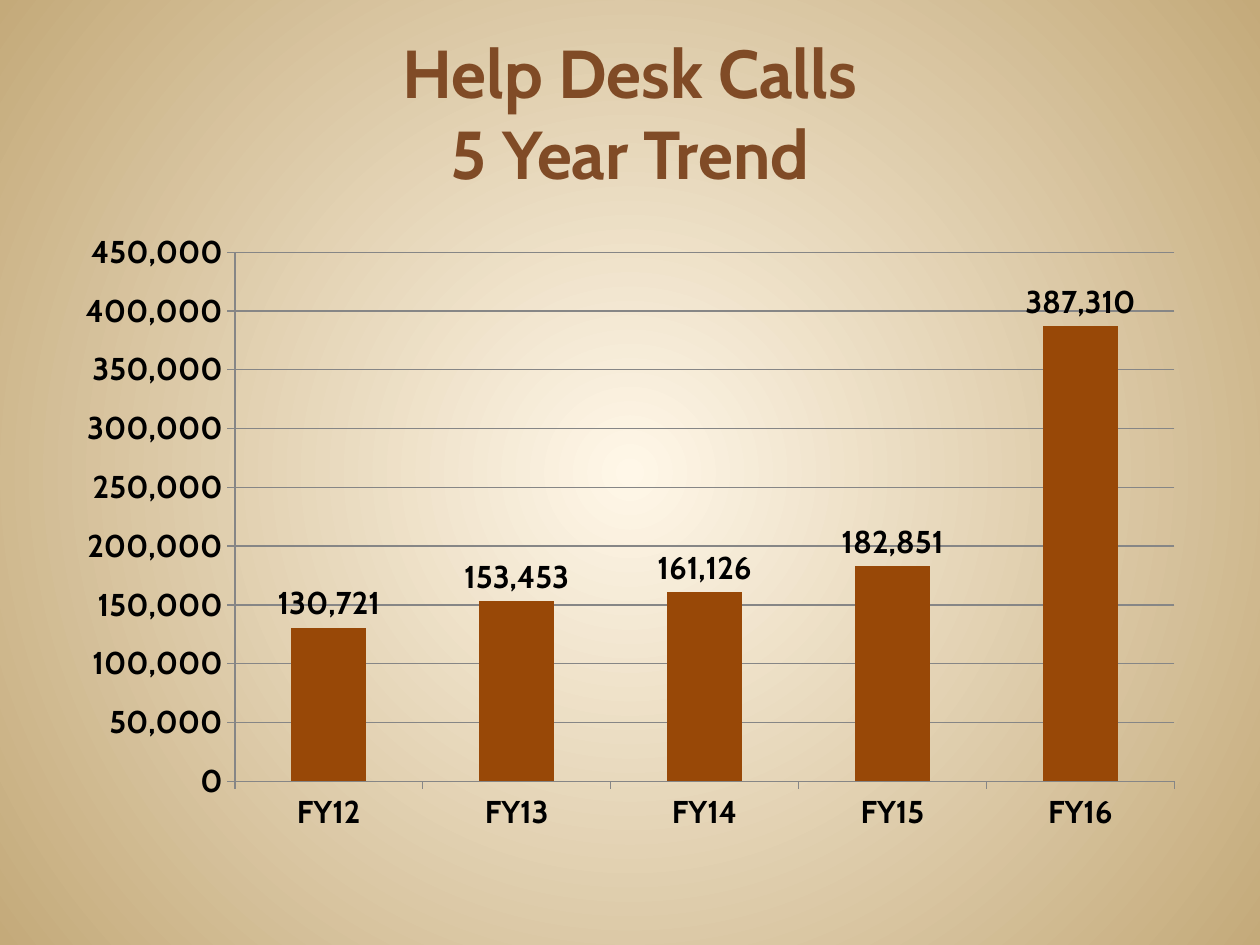
from lxml.etree import SubElement
from pptx import Presentation
from pptx.chart.data import CategoryChartData as ChartData
from pptx.dml.color import RGBColor
from pptx.enum.chart import XL_CHART_TYPE as ChartType, XL_LABEL_POSITION as LabelPosition, XL_TICK_MARK as TickMark
from pptx.enum.text import MSO_ANCHOR as Anchor, PP_ALIGN as Align
from pptx.oxml.ns import qn
from pptx.util import Cm, Pt

TITLE = "Help Desk Calls\v5 Year Trend"
CALLS = {"FY12": 130721, "FY13": 153453, "FY14": 161126, "FY15": 182851, "FY16": 387310}
SERIES = "Series 1"
NUMBER_FORMAT = "#,##0"

THEME = {
    "font": "Cabin",
    "title_size": 38.7,
    "chart_size": 18,
    "title": "804B26",
    "text": "000000",
    "bar": "984807",
    "line": "868686",
    "center": "FFF7E8",
    "edge": "C4AA7A",
}

WIDTH, HEIGHT = 25.4, 19.05
MARGIN = 1.27
CONTENT_WIDTH = WIDTH - 2 * MARGIN
TITLE_TOP, TITLE_HEIGHT = 0.84, 3.18
CHART_TOP, CHART_HEIGHT = 4.45, 12.57


def color(name):
    return RGBColor.from_string(THEME[name])


def format_font(font, size, fill, bold=True):
    font.name = THEME["font"]
    font.size = Pt(THEME[size])
    font.bold = bold
    font.color.rgb = color(fill)


def add_text(slide, text, *, left, top, width, height, size, fill, align, anchor):
    shape = slide.shapes.add_textbox(Cm(left), Cm(top), Cm(width), Cm(height))
    frame = shape.text_frame
    frame.word_wrap = True
    frame.vertical_anchor = anchor
    paragraph = frame.paragraphs[0]
    paragraph.text = text
    paragraph.alignment = align
    format_font(paragraph.font, size, fill)
    for run in paragraph.runs:
        format_font(run.font, size, fill)


def paint_background(slide):
    fill = slide.background.fill
    fill.gradient()
    for stop, position, name in zip(fill.gradient_stops, (0, 1), ("center", "edge")):
        stop.position = position
        stop.color.rgb = color(name)
    gradient = slide.background._cSld.find(".//" + qn("a:gradFill"))
    gradient.remove(gradient.find(qn("a:lin")))
    circle = SubElement(gradient, qn("a:path"), {"path": "circle"})
    SubElement(circle, qn("a:fillToRect"), {side: "50000" for side in "ltrb"})


def format_line(line):
    line.color.rgb = color("line")
    line.width = Pt(0.75)


def add_calls_chart(slide):
    data = ChartData(number_format=NUMBER_FORMAT)
    data.categories = list(CALLS)
    data.add_series(SERIES, list(CALLS.values()))
    chart = slide.shapes.add_chart(
        ChartType.COLUMN_CLUSTERED, Cm(MARGIN), Cm(CHART_TOP), Cm(CONTENT_WIDTH), Cm(CHART_HEIGHT), data
    ).chart
    chart.has_title = False
    chart.has_legend = False
    format_font(chart.font, "chart_size", "text")

    for axis in (chart.category_axis, chart.value_axis):
        axis.major_tick_mark = TickMark.OUTSIDE
        axis.minor_tick_mark = TickMark.NONE
        format_font(axis.tick_labels.font, "chart_size", "text")
        format_line(axis.format.line)

    value_axis = chart.value_axis
    value_axis.minimum_scale = 0
    value_axis.maximum_scale = 450000
    value_axis.major_unit = 50000
    value_axis.has_major_gridlines = True
    format_line(value_axis.major_gridlines.format.line)
    value_axis.tick_labels.number_format = NUMBER_FORMAT
    value_axis.tick_labels.number_format_is_linked = False

    plot = chart.plots[0]
    plot.gap_width = 150
    plot.vary_by_categories = False
    series = plot.series[0]
    series.format.fill.solid()
    series.format.fill.fore_color.rgb = color("bar")
    labels = series.data_labels
    labels.show_value = True
    labels.number_format = NUMBER_FORMAT
    labels.number_format_is_linked = False
    labels.position = LabelPosition.OUTSIDE_END
    format_font(labels.font, "chart_size", "text")


def main():
    presentation = Presentation()
    presentation.slide_width, presentation.slide_height = Cm(WIDTH), Cm(HEIGHT)
    slide = presentation.slides.add_slide(presentation.slide_layouts[6])
    paint_background(slide)
    add_text(
        slide, TITLE, left=MARGIN, top=TITLE_TOP, width=CONTENT_WIDTH, height=TITLE_HEIGHT,
        size="title_size", fill="title", align=Align.CENTER, anchor=Anchor.BOTTOM,
    )
    add_calls_chart(slide)
    presentation.save("out.pptx")


if __name__ == "__main__":
    main()
